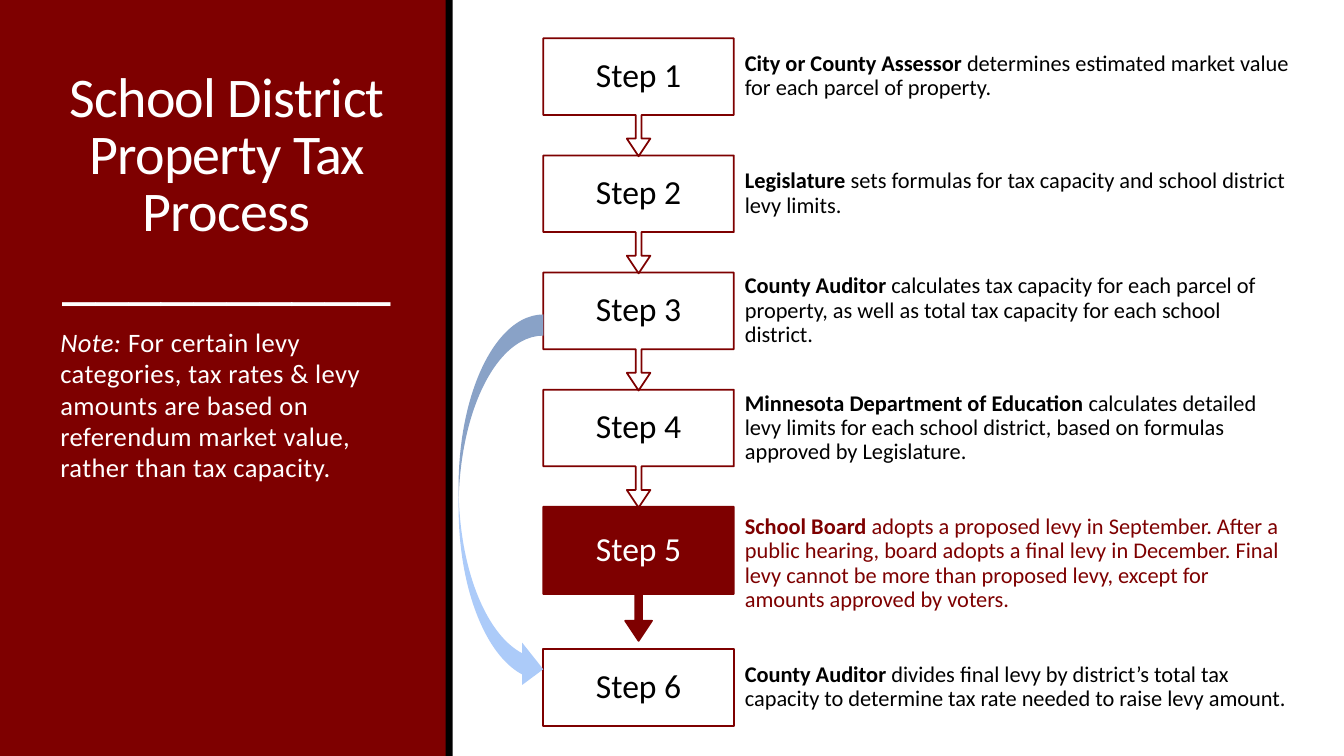
"""Build a slide on the six steps of the school district property tax process."""
import dataclasses
import typing

import pptx
import pptx.dml.color
import pptx.enum.shapes
import pptx.enum.text
import pptx.util

Shape = pptx.enum.shapes.MSO_SHAPE
Align = pptx.enum.text.PP_ALIGN
Anchor = pptx.enum.text.MSO_ANCHOR
Pt = pptx.util.Pt

HUES = {"maroon": "7E0000", "black": "000000", "white": "FFFFFF", "sky": "ACCBF9"}
FONT = "Calibri"
CELL = 0.1
COLS, ROWS = 133.33, 75
LEFT, WIDE = 53.9, 18.9
TOP, PITCH, TALL = 3.8, 11.62, 7.6


class Box(typing.NamedTuple):
    x: float
    y: float
    w: float
    h: float


class Run(typing.NamedTuple):
    text: str
    bold: bool = False
    slant: bool = False
    size: typing.Optional[float] = None


@dataclasses.dataclass
class Step:
    who: str
    does: str
    top: float
    tall: float = TALL
    full: float = 11.7
    note: float = TALL
    arrow: bool = True
    solid: bool = False


STEPS = [
    Step("City or County Assessor ",
         "determines estimated market value for each parcel of property.", TOP),
    Step("Legislature ",
         "sets formulas for tax capacity and school district levy limits.", TOP + PITCH),
    Step("County Auditor ",
         "calculates tax capacity for each parcel of property, as well as total "
         "tax capacity for each school district.", TOP + 2 * PITCH),
    Step("Minnesota Department of Education ",
         "calculates detailed levy limits for each school district, based on "
         "formulas approved by Legislature.", TOP + 3 * PITCH),
    Step("School Board ",
         "adopts a proposed levy in September. After a public hearing, board adopts "
         "a final levy in December. Final levy cannot be more than proposed levy, "
         "except for amounts approved by voters.", TOP + 4 * PITCH,
         tall=8.7, full=13.3, note=11.3, solid=True),
    Step("County Auditor ",
         "divides final levy by district’s total tax capacity to determine tax rate "
         "needed to raise levy amount.", 64.4, full=TALL, arrow=False),
]


def grid(n: float) -> int:
    """Turn a count of grid cells into a length."""
    return pptx.util.Inches(n * CELL)


def hue(name: str) -> pptx.dml.color.RGBColor:
    """Look up a named colour."""
    return pptx.dml.color.RGBColor.from_string(HUES[name])


def block(slide, kind, box: Box, fill: str = "", line: str = ""):
    """Draw a preset shape with a plain fill and line."""
    shape = slide.shapes.add_shape(kind, *map(grid, box))
    shape.shadow.inherit = False
    if fill:
        shape.fill.solid()
        shape.fill.fore_color.rgb = hue(fill)
    else:
        shape.fill.background()
    if line:
        shape.line.color.rgb = hue(line)
        shape.line.width = Pt(1.25)
    else:
        shape.line.fill.background()
    return shape


def label(slide, box: Box, lines: list[list[Run]], size: float, color: str,
          pad: tuple[float, float], align=Align.LEFT, anchor=Anchor.MIDDLE,
          lead: float = 0.9, track: int = 0):
    """Write lines of runs into one paragraph of a text box."""
    frame = slide.shapes.add_textbox(*map(grid, box)).text_frame
    frame.word_wrap = True
    frame.vertical_anchor = anchor
    frame.margin_left = frame.margin_right = grid(pad[0])
    frame.margin_top = frame.margin_bottom = grid(pad[1])
    para = frame.paragraphs[0]
    para.alignment, para.line_spacing = align, lead
    para.font.name, para.font.size = FONT, Pt(size)
    para.font.color.rgb = hue(color)
    for row, runs in enumerate(lines):
        if row:
            para.add_line_break()
        for part in runs:
            run = para.add_run()
            run.text = part.text
            if part.bold:
                run.font.bold = True
            if part.slant:
                run.font.italic = True
            if part.size:
                run.font.size = Pt(part.size)
            if track:
                run.font._element.set("spc", str(track))
    return para


def panel(slide) -> None:
    """Draw the side panel with its title and note."""
    block(slide, Shape.RECTANGLE, Box(0, 0, 44.3, ROWS), "maroon")
    block(slide, Shape.RECTANGLE, Box(44.2, 0, 0.7, ROWS), "black")
    label(slide, Box(5, 6.5, 35, 25),
          [[Run("School District Property Tax Process")], [Run("_" * 10, size=48)]],
          40, "white", (1, 0.5), Align.CENTER, lead=0.85, track=-50)
    note = label(slide, Box(5, 32, 35, 37),
                 [[Run("Note: ", slant=True),
                   Run("For certain levy categories, tax rates & levy amounts are based "
                       "on referendum market value, rather than tax capacity.")]],
                 19, "white", (1, 0.5), anchor=Anchor.TOP, lead=0.98, track=30)
    note.space_before = note.space_after = Pt(6)


def stage(slide, num: int, step: Step) -> None:
    """Draw one step with its arrow and its text."""
    kind = Shape.UP_ARROW_CALLOUT if step.arrow else Shape.RECTANGLE
    shape = block(slide, kind, Box(LEFT, step.top, WIDE, step.full),
                  "maroon" if step.solid else "", "maroon")
    if step.arrow:
        shape.rotation = 180
        for i, share in enumerate((0.05, 0.1, 0.15, 0.65)):
            shape.adjustments[i] = share
    label(slide, Box(LEFT, step.top, WIDE, step.tall), [[Run(f"Step {num}")]], 24,
          "white" if step.solid else "black", (1.3, 1.9), Align.CENTER)
    label(slide, Box(LEFT + WIDE, step.top, 56.6, step.note),
          [[Run(step.who, bold=True), Run(step.does)]], 16,
          "maroon" if step.solid else "black", (1.1, 2.2))


def main() -> None:
    """Build and save the slide."""
    deck = pptx.Presentation()
    deck.slide_width, deck.slide_height = grid(COLS), grid(ROWS)
    slide = deck.slides.add_slide(deck.slide_layouts[6])
    panel(slide)
    for num, step in enumerate(STEPS, 1):
        stage(slide, num, step)
    loop = block(slide, Shape.CURVED_LEFT_ARROW, Box(45.5, 31.2, 8.4, 37.3), "sky")
    loop._element.spPr.xfrm.set("flipH", "1")
    deck.save("out.pptx")


if __name__ == "__main__":
    main()
